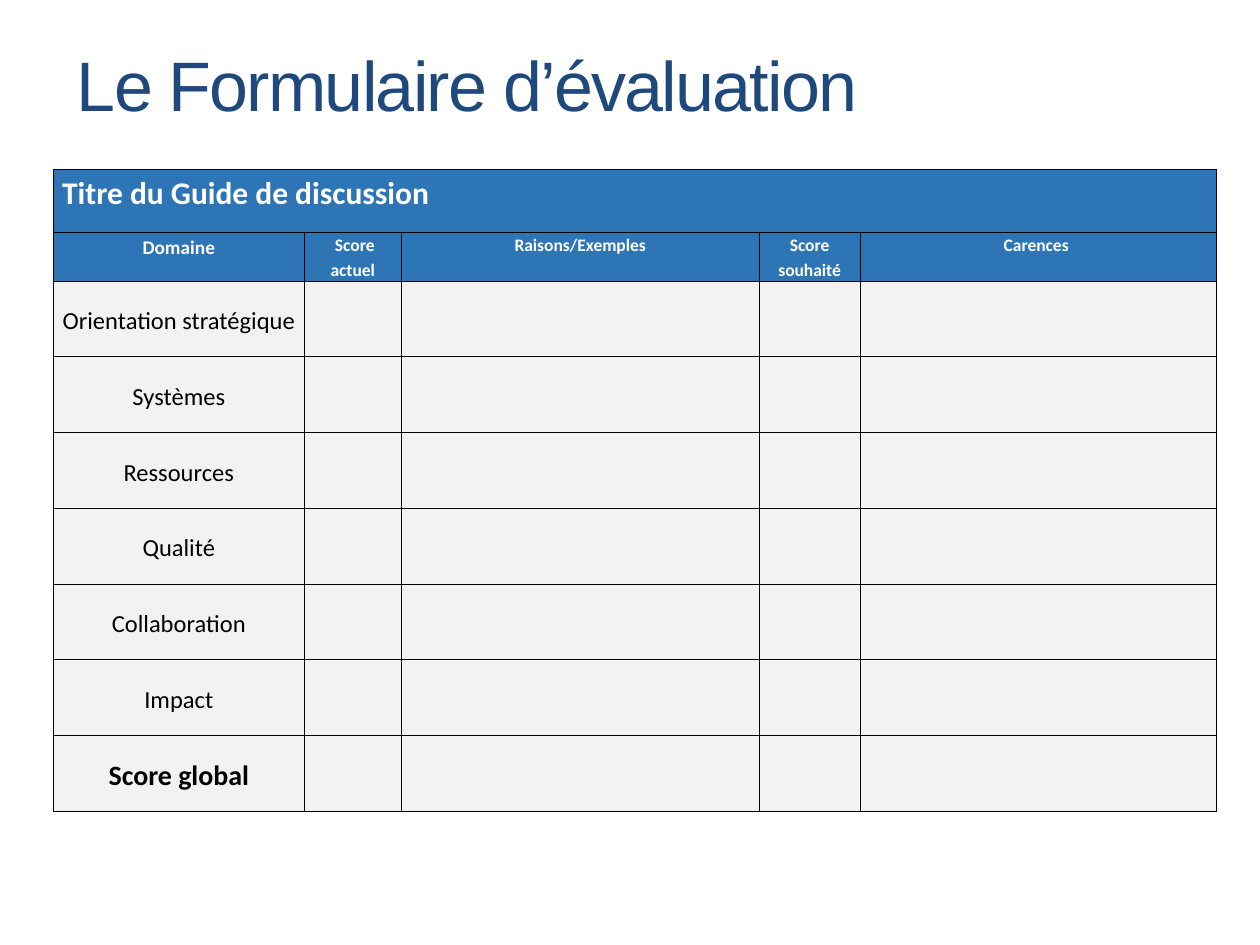
from lxml.etree import SubElement
from pptx import Presentation
from pptx.dml.color import RGBColor
from pptx.enum.text import MSO_ANCHOR, PP_ALIGN
from pptx.oxml.ns import qn
from pptx.util import Pt

BLUE, GREY, WHITE, BLACK, NAVY = "2E75B6", "F2F2F2", "FFFFFF", "000000", "1F497D"
COLUMN_WIDTHS = [143.4, 55.4, 204.5, 57.7, 203.6]
ROW_HEIGHTS = [36, 28] + [43.3] * 7
HEADERS = [("Domaine", 11), (" Score actuel", 10), ("Raisons/Exemples", 10),
           ("Score souhaité", 10), ("Carences ", 10)]
DOMAINS = ["Orientation stratégique", "Systèmes", "Ressources", "Qualité",
           "Collaboration", "Impact"]


def color(value):
    """Return the colour for a hex string."""
    return RGBColor.from_string(value)


def add_title(slide, text):
    """Place and format the slide title."""
    title = slide.shapes.title
    title.left, title.top, title.width, title.height = Pt(36.7), Pt(8.6), Pt(648), Pt(77.8)
    frame = title.text_frame
    frame.text = text
    frame.word_wrap = True
    frame.vertical_anchor = MSO_ANCHOR.MIDDLE
    paragraph = frame.paragraphs[0]
    paragraph.alignment = PP_ALIGN.LEFT
    font = paragraph.runs[0].font
    font.name, font.size = "Arial", Pt(40)
    font.color.rgb = color(NAVY)
    font._element.set("spc", "-100")


def format_cell(cell, fill):
    """Give a cell its margins, thin black borders and fill."""
    cell.margin_left = cell.margin_right = Pt(5)
    cell.margin_top = cell.margin_bottom = Pt(0)
    properties = cell._tc.get_or_add_tcPr()
    for side in ("a:lnL", "a:lnR", "a:lnT", "a:lnB"):
        line = SubElement(properties, qn(side), w=str(Pt(0.5)))
        SubElement(SubElement(line, qn("a:solidFill")), qn("a:srgbClr"), val=BLACK)
    cell.fill.solid()
    cell.fill.fore_color.rgb = color(fill)


def write_cell(cell, text, size, ink, bold, alignment=PP_ALIGN.CENTER,
               anchor=MSO_ANCHOR.TOP):
    """Write one formatted paragraph in a cell."""
    cell.text = text
    cell.vertical_anchor = anchor
    paragraph = cell.text_frame.paragraphs[0]
    paragraph.alignment = alignment
    paragraph.line_spacing = 1.15
    font = paragraph.font
    font.name, font.size, font.bold = "Calibri", Pt(size), bold
    font.color.rgb = color(ink)


def add_form_table(slide):
    """Add the empty evaluation grid."""
    table = slide.shapes.add_table(
        len(ROW_HEIGHTS), len(COLUMN_WIDTHS), Pt(30.5), Pt(96.6),
        Pt(sum(COLUMN_WIDTHS)), Pt(sum(ROW_HEIGHTS))).table
    for column, width in zip(table.columns, COLUMN_WIDTHS):
        column.width = Pt(width)
    for index, (row, height) in enumerate(zip(table.rows, ROW_HEIGHTS)):
        row.height = Pt(height)
        for cell in row.cells:
            format_cell(cell, BLUE if index < 2 else GREY)
    table.cell(0, 0).merge(table.cell(0, len(COLUMN_WIDTHS) - 1))
    return table


def fill_form(table):
    """Write the headings and the row labels."""
    write_cell(table.cell(0, 0), "Titre du Guide de discussion", 18, WHITE, True,
               PP_ALIGN.LEFT)
    for column, (text, size) in enumerate(HEADERS):
        write_cell(table.cell(1, column), text, size, WHITE, True)
    for row, text in enumerate(DOMAINS, start=2):
        write_cell(table.cell(row, 0), text, 14, BLACK, False, anchor=MSO_ANCHOR.MIDDLE)
    write_cell(table.cell(len(ROW_HEIGHTS) - 1, 0), "Score global", 16, BLACK, True,
               anchor=MSO_ANCHOR.MIDDLE)


def main():
    """Build and save the slide."""
    presentation = Presentation()
    presentation.slide_width, presentation.slide_height = Pt(720), Pt(540)
    slide = presentation.slides.add_slide(presentation.slide_layouts[5])
    fill_form(add_form_table(slide))
    add_title(slide, "Le Formulaire d’évaluation")
    presentation.save("out.pptx")


if __name__ == "__main__":
    main()
